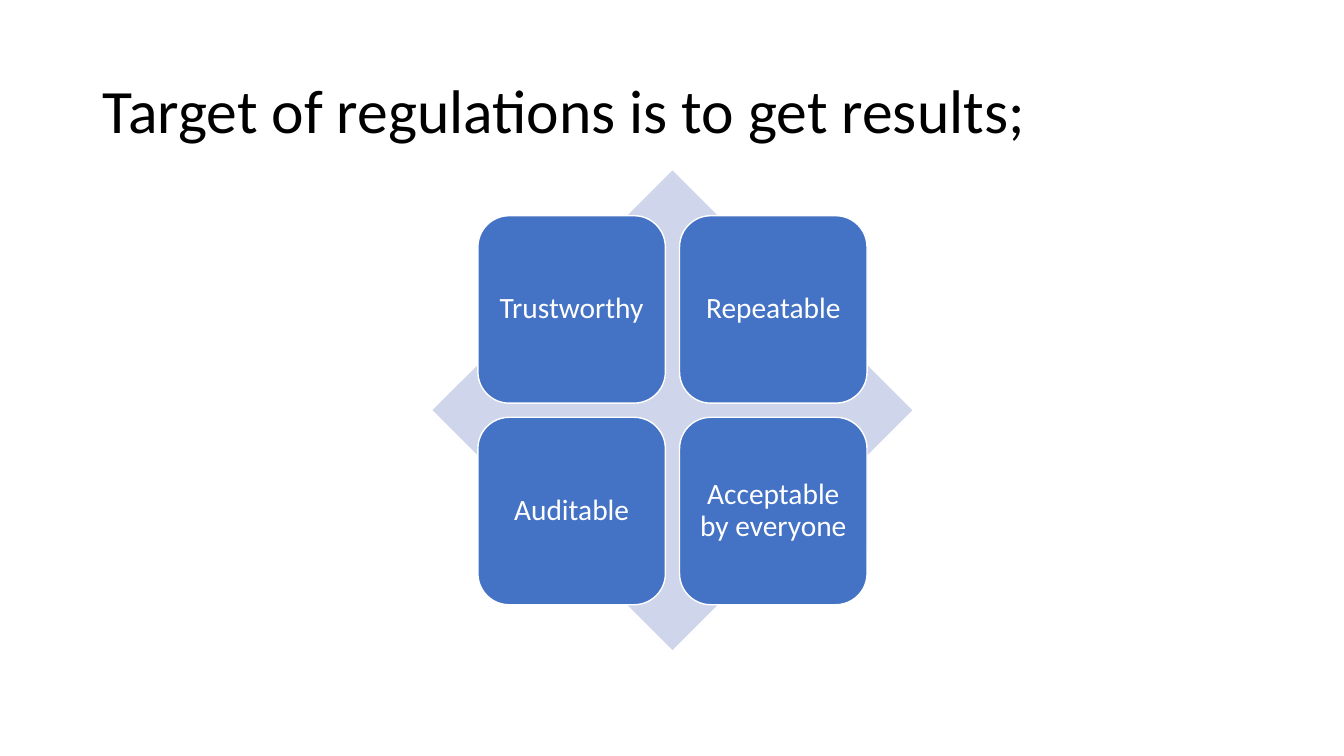
from dataclasses import dataclass

from pptx import Presentation
from pptx.dml.color import RGBColor
from pptx.enum import shapes, text
from pptx.util import Inches, Pt


@dataclass(frozen=True)
class Theme:
    font: str = "Calibri"
    ink: str = "000000"
    white: str = "FFFFFF"
    tile: str = "4472C4"
    back: str = "CFD5EA"
    head: int = 44
    label: int = 21


THEME = Theme()
GOALS = ["Trustworthy", "Repeatable", "Auditable", "Acceptable by everyone"]
LEFT, TOP, SIDE, STEP = 4.74, 2.14, 1.86, 2


def write(frame, words, size, color, align):
    frame.word_wrap = True
    frame.auto_size = text.MSO_AUTO_SIZE.NONE
    frame.vertical_anchor = text.MSO_ANCHOR.MIDDLE
    para = frame.paragraphs[0]
    para.alignment = align
    para.line_spacing = 0.9
    run = para.add_run()
    run.text = words
    run.font.name = THEME.font
    run.font.size = Pt(size)
    run.font.color.rgb = RGBColor.from_string(color)


def add_title(slide, words):
    title = slide.shapes.title
    title.left, title.top = Inches(0.92), Inches(0.4)
    title.width, title.height = Inches(11.5), Inches(1.45)
    write(title.text_frame, words, THEME.head, THEME.ink, text.PP_ALIGN.LEFT)


def add_block(slide, kind, left, top, side, fill):
    block = slide.shapes.add_shape(
        kind, Inches(left), Inches(top), Inches(side), Inches(side))
    block.shadow.inherit = False
    block.fill.solid()
    block.fill.fore_color.rgb = RGBColor.from_string(fill)
    block.line.fill.background()
    return block


def add_tile(slide, left, top, words):
    kind = shapes.MSO_SHAPE.ROUNDED_RECTANGLE
    tile = add_block(slide, kind, left, top, SIDE, THEME.tile)
    tile.line.color.rgb = RGBColor.from_string(THEME.white)
    tile.line.width = Pt(1)
    frame = tile.text_frame
    frame.margin_left = frame.margin_right = Inches(0.09)
    frame.margin_top = frame.margin_bottom = Inches(0.09)
    write(frame, words, THEME.label, THEME.white, text.PP_ALIGN.CENTER)


def main():
    deck = Presentation()
    deck.slide_width, deck.slide_height = Inches(13.33), Inches(7.5)
    slide = deck.slides.add_slide(deck.slide_layouts[5])
    add_title(slide, "Target of regulations is to get results;")
    add_block(slide, shapes.MSO_SHAPE.DIAMOND, 4.29, 1.69, 4.76, THEME.back)
    for index, goal in enumerate(GOALS):
        row, col = divmod(index, 2)
        add_tile(slide, LEFT + col * STEP, TOP + row * STEP, goal)
    deck.save("out.pptx")


if __name__ == "__main__":
    main()
